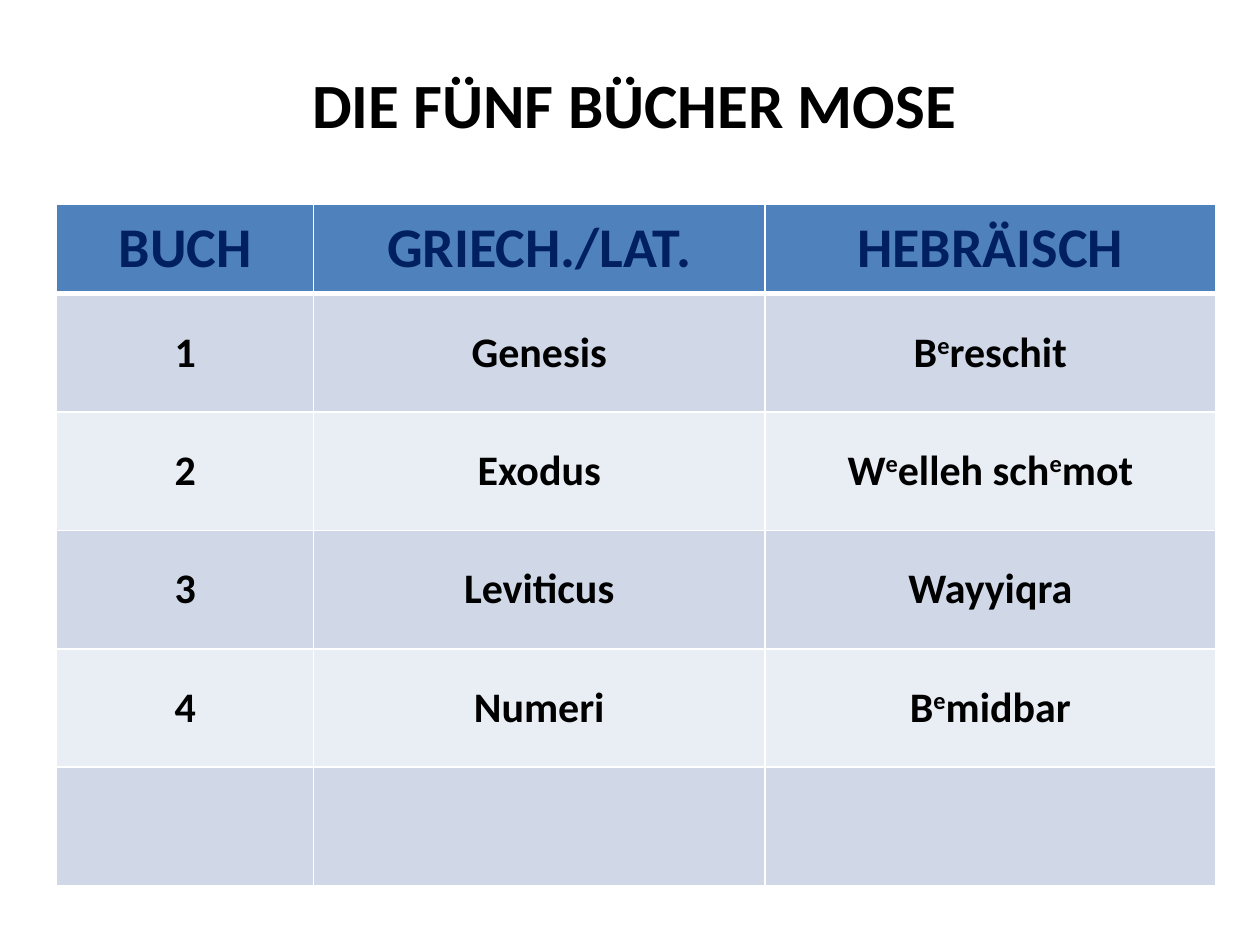
from lxml import etree
from pptx import Presentation
from pptx.dml.color import RGBColor
from pptx.enum.shapes import MSO_SHAPE as Shape
from pptx.enum.text import MSO_ANCHOR as Anchor, PP_ALIGN as Align
from pptx.oxml.ns import qn
from pptx.util import Inches, Pt

TITLE = "DIE FÜNF BÜCHER MOSE"
HEAD = ["BUCH", "GRIECH./LAT.", "HEBRÄISCH"]
BOOKS = [
    ["1", "Genesis", "B^e^reschit"],
    ["2", "Exodus", "W^e^elleh sch^e^mot"],
    ["3", "Leviticus", "Wayyiqra"],
    ["4", "Numeri", "B^e^midbar"],
    ["", "", ""],
]
WIDTHS = [2.04, 3.58, 3.58]
HEAD_H, BOOK_H = 0.71, 0.94
BANDS = ["D0D8E8", "E9EDF4"]


def paint(fill, color):
    fill.solid()
    fill.fore_color.rgb = RGBColor.from_string(color)


def write(frame, text, size=24, color="000000"):
    para = frame.paragraphs[0]
    para.alignment = Align.CENTER
    para.font.size = Pt(size)
    for i, part in enumerate(text.split("^")):
        if not part:
            continue
        run = para.add_run()
        run.text = part
        font = run.font
        font.name, font.size, font.bold = "Calibri", Pt(size), True
        font.color.rgb = RGBColor.from_string(color)
        if i % 2:
            run._r.get_or_add_rPr().set("baseline", "30000")


def edge(cell, side, width):
    props = cell._tc.get_or_add_tcPr()
    line = etree.SubElement(props, qn(f"a:ln{side}"), w=str(Pt(width)))
    fill = etree.SubElement(line, qn("a:solidFill"))
    etree.SubElement(fill, qn("a:srgbClr"), val="FFFFFF")


def add_title(slide):
    box = slide.shapes.add_shape(
        Shape.RECTANGLE, Inches(0.43), Inches(0.44), Inches(9.21), Inches(0.63))
    box.shadow.inherit = False
    box.line.fill.background()
    paint(box.fill, "FFFFFF")
    tint = box._element.spPr.find(".//" + qn("a:srgbClr"))
    etree.SubElement(tint, qn("a:alpha"), val="60000")
    frame = box.text_frame
    frame.word_wrap = True
    frame.vertical_anchor = Anchor.TOP
    frame.margin_top, frame.margin_bottom = Inches(0.08), 0
    write(frame, TITLE, size=36)


def add_books(slide):
    rows = [HEAD] + BOOKS
    high = HEAD_H + BOOK_H * len(BOOKS)
    grid = slide.shapes.add_table(
        len(rows), len(HEAD), Inches(0.45), Inches(1.62),
        Inches(sum(WIDTHS)), Inches(high)).table
    for col, width in zip(grid.columns, WIDTHS):
        col.width = Inches(width)
    for r, row in enumerate(rows):
        grid.rows[r].height = Inches(BOOK_H if r else HEAD_H)
        for c, text in enumerate(row):
            cell = grid.cell(r, c)
            cell.vertical_anchor = Anchor.MIDDLE
            for side in "LRTB":
                thick = (r, side) in [(0, "B"), (1, "T")]
                edge(cell, side, 3 if thick else 1)
            if r:
                paint(cell.fill, BANDS[(r - 1) % 2])
                write(cell.text_frame, text)
            else:
                paint(cell.fill, "4F81BD")
                write(cell.text_frame, text, size=32, color="002060")


def main():
    deck = Presentation()
    deck.slide_width, deck.slide_height = Inches(10), Inches(7.5)
    slide = deck.slides.add_slide(deck.slide_layouts[6])
    add_title(slide)
    add_books(slide)
    deck.save("out.pptx")


if __name__ == "__main__":
    main()
